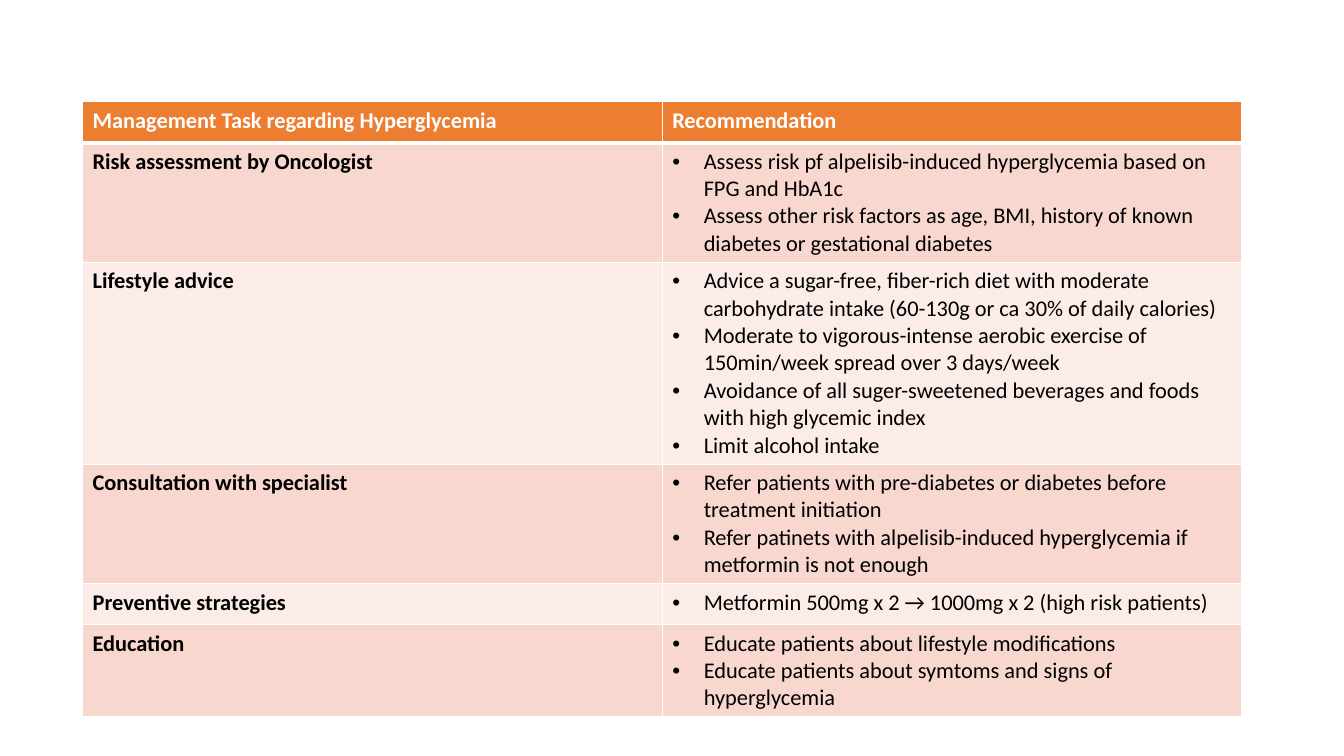
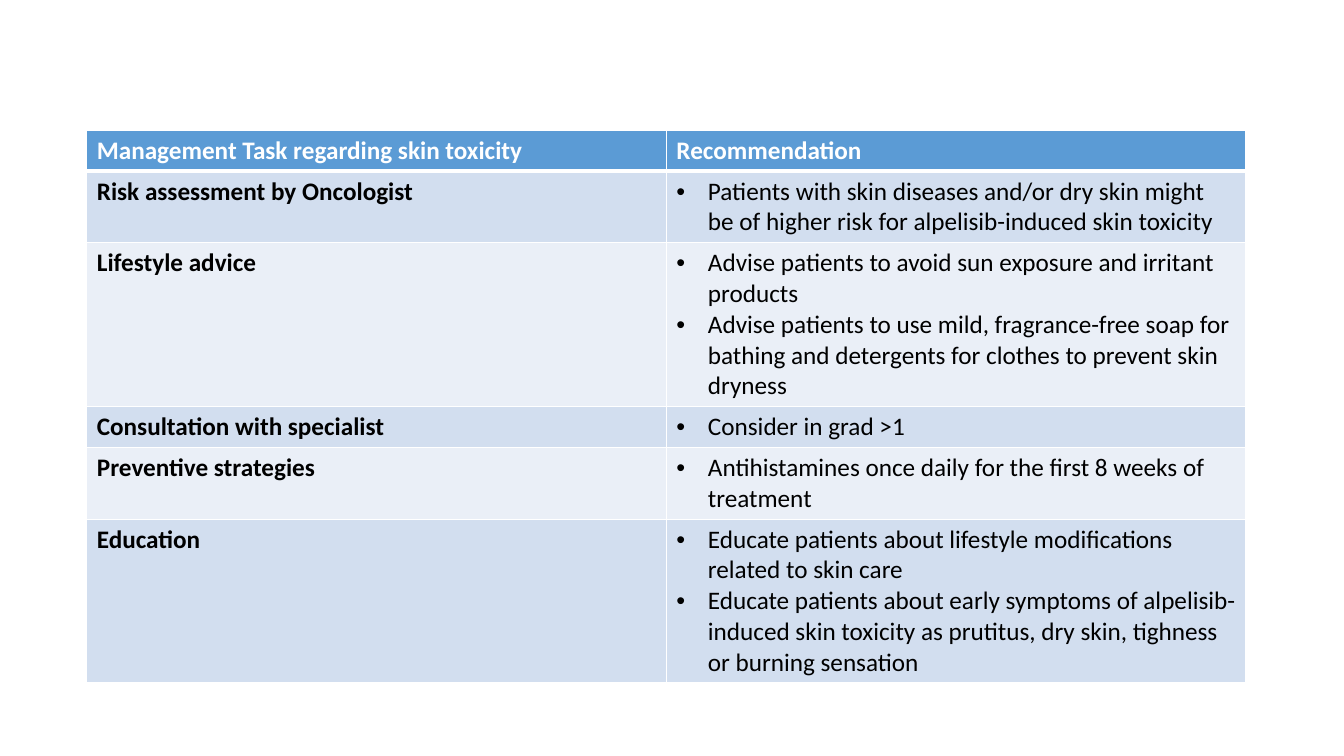
"""Build two slides of management recommendations, each a two-column table."""
from lxml.etree import SubElement
from pptx import Presentation
from pptx.dml.color import RGBColor
from pptx.oxml.ns import qn
from pptx.util import Pt

WHITE = RGBColor(0xFF, 0xFF, 0xFF)
BLACK = RGBColor(0x00, 0x00, 0x00)
ORANGE = RGBColor(0xED, 0x7D, 0x31)
ORANGE_BANDS = (RGBColor(0xF8, 0xD7, 0xCE), RGBColor(0xFC, 0xEC, 0xE8))
BLUE = RGBColor(0x5B, 0x9B, 0xD5)
BLUE_BANDS = (RGBColor(0xD2, 0xDE, 0xEF), RGBColor(0xEA, 0xEF, 0xF7))

FONT = "Calibri"
COL_W = Pt(414)
ROW_H = Pt(29.2)
INDENT = Pt(22.5)
THIN, THICK = Pt(1), Pt(3)

TASKS = (
    "Risk assessment by Oncologist",
    "Lifestyle advice",
    "Consultation with specialist",
    "Preventive strategies",
    "Education",
)

SLIDES = [
    {
        "topic": "Hyperglycemia",
        "at": (Pt(59), Pt(72.7)),
        "size": Pt(16),
        "head": ORANGE,
        "bands": ORANGE_BANDS,
        "advice": [
            ["Assess risk pf alpelisib-induced hyperglycemia based on FPG and HbA1c",
             "Assess other risk factors as age, BMI, history of known diabetes or gestational diabetes"],
            ["Advice a sugar-free, fiber-rich diet with moderate carbohydrate intake "
             "(60-130g or ca 30% of daily calories)",
             "Moderate to vigorous-intense aerobic exercise of 150min/week spread over 3 days/week",
             "Avoidance of all suger-sweetened beverages and foods with high glycemic index",
             "Limit alcohol intake"],
            ["Refer patients with pre-diabetes or diabetes before treatment initiation",
             "Refer patinets with alpelisib-induced hyperglycemia if metformin is not enough"],
            ["Metformin 500mg x 2 → 1000mg x 2 (high risk patients)"],
            ["Educate patients about lifestyle modifications",
             "Educate patients about symtoms and signs of hyperglycemia"],
        ],
    },
    {
        "topic": "skin toxicity",
        "at": (Pt(62), Pt(93)),
        "size": Pt(18),
        "head": BLUE,
        "bands": BLUE_BANDS,
        "advice": [
            ["Patients with skin diseases and/or dry skin might be of higher risk for "
             "alpelisib-induced skin toxicity"],
            ["Advise patients to avoid sun exposure and irritant products",
             "Advise patients to use mild, fragrance-free soap for bathing and detergents "
             "for clothes to prevent skin dryness"],
            ["Consider in grad >1"],
            ["Antihistamines once daily for the first 8 weeks of treatment"],
            ["Educate patients about lifestyle modifications related to skin care",
             "Educate patients about early symptoms of alpelisib-induced skin toxicity as "
             "prutitus, dry skin, tighness or burning sensation"],
        ],
    },
]


def set_borders(cell, top, bottom):
    tc_pr = cell._tc.get_or_add_tcPr()
    for side, width in (("L", THIN), ("R", THIN), ("T", top), ("B", bottom)):
        ln = SubElement(tc_pr, qn(f"a:ln{side}"), w=str(width))
        fill = SubElement(ln, qn("a:solidFill"))
        SubElement(fill, qn("a:srgbClr"), val=str(WHITE))


def add_bullet(p):
    p_pr = p._p.get_or_add_pPr()
    p_pr.set("marL", str(INDENT))
    p_pr.set("indent", str(-INDENT))
    SubElement(p_pr, qn("a:buFont"), typeface="Arial")
    SubElement(p_pr, qn("a:buChar"), char="•")


def fill_cell(cell, lines, size, color, bold, bulleted):
    tf = cell.text_frame
    tf.text = "\n".join(lines)
    for p in tf.paragraphs:
        if bulleted:
            add_bullet(p)
        for r in p.runs:
            r.font.name = FONT
            r.font.size = size
            r.font.bold = bold
            r.font.color.rgb = color


def add_task_table(s, spec_data):
    rows = [([f"Management Task regarding {spec_data['topic']}"], ["Recommendation"])]
    rows += [([task], advice) for task, advice in zip(TASKS, spec_data["advice"])]
    left, top = spec_data["at"]
    table = s.shapes.add_table(len(rows), 2, left, top, 2 * COL_W, len(rows) * ROW_H).table
    for col in table.columns:
        col.width = COL_W
    for i, row in enumerate(rows):
        table.rows[i].height = ROW_H
        is_head = i == 0
        for j, lines in enumerate(row):
            cell = table.cell(i, j)
            set_borders(cell, THICK if i == 1 else THIN, THICK if is_head else THIN)
            cell.fill.solid()
            cell.fill.fore_color.rgb = spec_data["head"] if is_head else spec_data["bands"][(i - 1) % 2]
            bulleted = j == 1 and not is_head
            fill_cell(cell, lines, spec_data["size"], WHITE if is_head else BLACK,
                      not bulleted, bulleted)


def main():
    prs = Presentation()
    prs.slide_width, prs.slide_height = Pt(960), Pt(540)
    for content in SLIDES:
        s = prs.slides.add_slide(prs.slide_layouts[6])
        add_task_table(s, content)
    prs.save("out.pptx")


if __name__ == "__main__":
    main()
